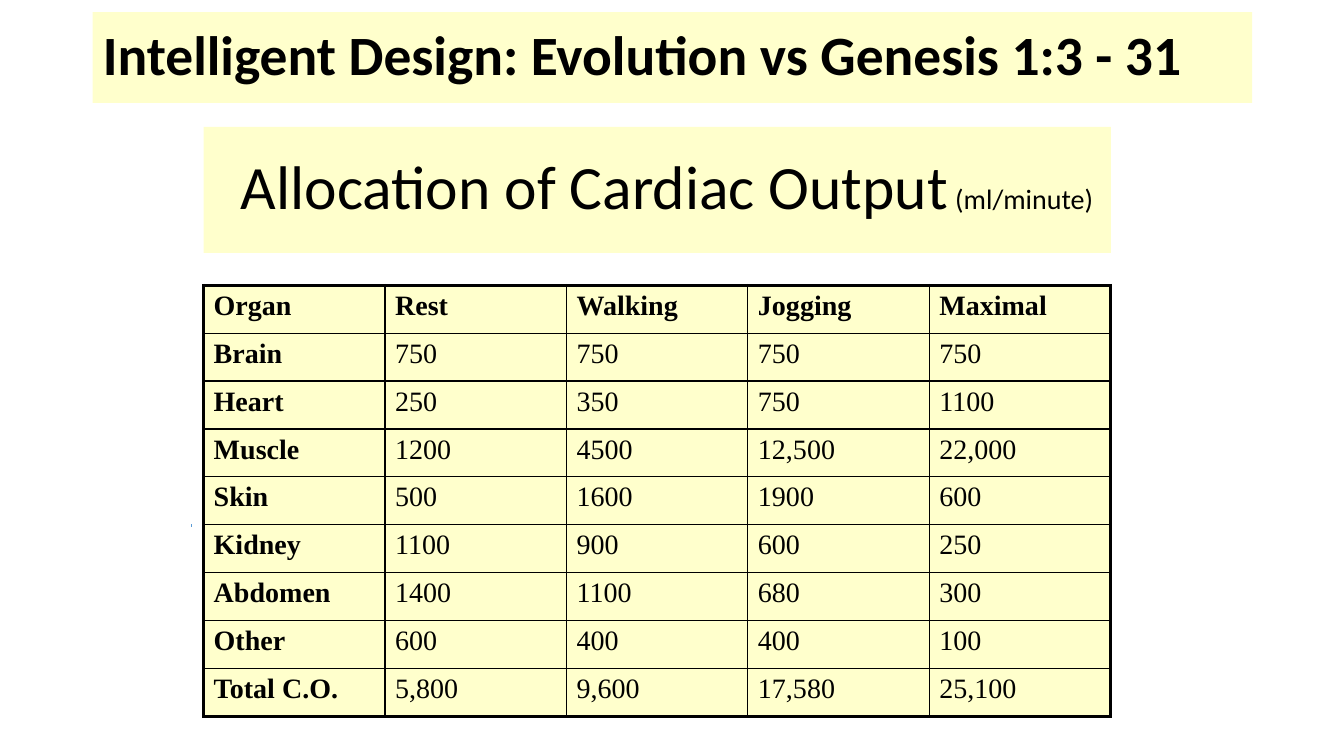
"""Build a slide with a table of cardiac output by organ and activity."""
from lxml import etree
from pptx import Presentation
from pptx.dml.color import RGBColor
from pptx.enum.shapes import MSO_CONNECTOR, MSO_SHAPE
from pptx.enum.text import MSO_ANCHOR, MSO_AUTO_SIZE, PP_ALIGN
from pptx.oxml.ns import qn
from pptx.util import Inches, Pt

STRAIGHT = MSO_CONNECTOR.STRAIGHT
RECTANGLE = MSO_SHAPE.RECTANGLE
MIDDLE = MSO_ANCHOR.MIDDLE
NO_FIT = MSO_AUTO_SIZE.NONE
LEFT = PP_ALIGN.LEFT
TITLE_ONLY = 5

COLOURS = {"ink": "000000", "cream": "FFFFCC", "blue": "5B9BD5"}
THICK, THIN = 2.25, 1

OUTPUT_ROWS = [
    ["Organ", "Rest", "Walking", "Jogging", "Maximal"],
    ["Brain", "750", "750", "750", "750"],
    ["Heart", "250", "350", "750", "1100"],
    ["Muscle", "1200", "4500", "12,500", "22,000"],
    ["Skin", "500", "1600", "1900", "600"],
    ["Kidney", "1100", "900", "600", "250"],
    ["Abdomen", "1400", "1100", "680", "300"],
    ["Other", "600", "400", "400", "100"],
    ["Total C.O.", "5,800", "9,600", "17,580", "25,100"],
]


def colour(name):
    return RGBColor.from_string(COLOURS[name])


def write(para, text, size, font="Calibri", bold=False, ink="ink"):
    span = para.add_run()
    span.text = text
    span.font.size = Pt(size)
    span.font.name = font
    span.font.bold = bold
    span.font.color.rgb = colour(ink)


class Page:
    """Places elements on one slide by percentages of its size."""

    def __init__(self, deck):
        self.width, self.height = deck.slide_width, deck.slide_height
        self.slide = deck.slides.add_slide(deck.slide_layouts[TITLE_ONLY])

    def place(self, left, top, width, height):
        return [round(share * side / 100) for share, side in
                zip((left, top, width, height), (self.width, self.height) * 2)]

    def banner(self, box, spans, indent=0):
        box.fill.solid()
        box.fill.fore_color.rgb = colour("cream")
        box.line.fill.background()
        frame = box.text_frame
        frame.word_wrap = True
        frame.auto_size = NO_FIT
        frame.vertical_anchor = MIDDLE
        para = frame.paragraphs[0]
        para.alignment = LEFT
        para.line_spacing = 0.9
        para._p.get_or_add_pPr().set("marL", str(Inches(indent)))
        for text, style in spans:
            write(para, text, **style)

    def title(self, area, text):
        box = self.slide.shapes.title
        box.left, box.top, box.width, box.height = self.place(*area)
        self.banner(box, [(text, {"size": 39.6, "bold": True})])

    def subtitle(self, area, spans, indent):
        box = self.slide.shapes.add_shape(RECTANGLE, *self.place(*area))
        box.shadow.inherit = False
        self.banner(box, spans, indent)

    def border(self, cell, side, weight):
        properties = cell._tc.get_or_add_tcPr()
        line = etree.SubElement(properties, qn(f"a:ln{side}"), w=str(Pt(weight)))
        fill = etree.SubElement(line, qn("a:solidFill"))
        etree.SubElement(fill, qn("a:srgbClr"), val=COLOURS["ink"])

    def table(self, area, rows):
        last_row, last_column = len(rows) - 1, len(rows[0]) - 1
        left, top, width, height = self.place(*area)
        table = self.slide.shapes.add_table(
            len(rows), len(rows[0]), left, top, width, height).table
        for row, values in enumerate(rows):
            for column, value in enumerate(values):
                cell = table.cell(row, column)
                edges = {"L": column == 0, "R": column == last_column,
                         "T": row == 0, "B": row == last_row}
                for side, outer in edges.items():
                    self.border(cell, side, THICK if outer else THIN)
                cell.fill.solid()
                cell.fill.fore_color.rgb = colour("cream")
                para = cell.text_frame.paragraphs[0]
                para.space_before = Pt(4)
                write(para, value, 20, font="Times New Roman",
                      bold=row == 0 or column == 0)

    def line(self, start, end, ink):
        line = self.slide.shapes.add_connector(
            STRAIGHT, *self.place(*start, *end))
        line.line.color.rgb = colour(ink)
        line.line.width = Pt(THICK)
        etree.SubElement(line._element.spPr, qn("a:effectLst"))


def main():
    deck = Presentation()
    deck.slide_width, deck.slide_height = Inches(13.33), Inches(7.5)
    page = Page(deck)
    left, width = 15.15, 67.5
    page.title((6.9, 1.6, 86.27, 12), "Intelligent Design: Evolution vs Genesis 1:3 - 31")
    page.subtitle((left, 16.8, width, 16.67),
                  [("Allocation of Cardiac Output", {"size": 44}),
                   (" (ml/minute)", {"size": 20})], indent=0.27)
    page.table((left, 37.73, width, 57.07), OUTPUT_ROWS)
    page.line((14.25, 69.47), (14.18, 69.47), "blue")
    page.line((left, 63.07), (left, 69.87), "ink")
    deck.save("out.pptx")


if __name__ == "__main__":
    main()
